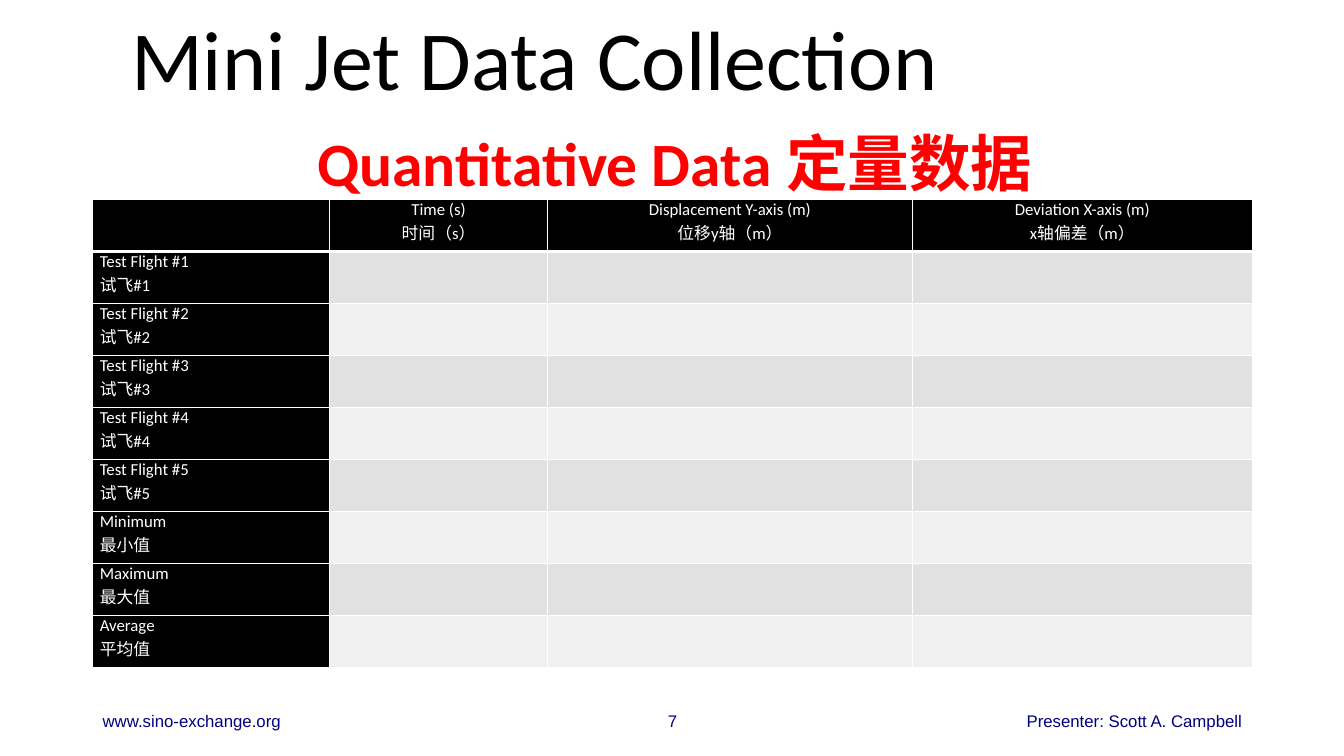
from pptx import Presentation
from pptx.dml.color import RGBColor as Rgb
from pptx.enum.text import MSO_ANCHOR as Anchor, MSO_AUTO_SIZE as Fit, PP_ALIGN as Align
from pptx.oxml import parse_xml as to_xml
from pptx.oxml.ns import nsdecls
from pptx.util import Pt

PX = 9144
HUES = {"black": "000000", "white": "FFFFFF", "red": "FF0000",
        "navy": "00007D", "dark": "E1E1E1", "light": "F0F0F0"}
COLS = [235, 216, 362, 337]
HEADS = ["", "Time (s)\v时间（s）", "Displacement Y-axis (m)\v位移y轴（m）",
         "Deviation X-axis (m)\vx轴偏差（m）"]
ROWS = [f"Test Flight #{n}\v试飞#{n}" for n in range(1, 6)]
ROWS += ["Minimum\v最小值", "Maximum\v最大值", "Average\v平均值"]


def style(para, size, hue, face="Calibri", bold=False, align=Align.LEFT):
    """Format a paragraph and its runs."""
    para.alignment = align
    for run in para.runs:
        font = run.font
        font.name, font.size, font.bold = face, Pt(size), bold
        font.color.rgb = Rgb.from_string(HUES[hue])


def label(slide, box, text, *look, **more):
    """Add a one-line text box centred vertically in the box."""
    frame = slide.shapes.add_textbox(*(n * PX for n in box)).text_frame
    frame.word_wrap = True
    frame.vertical_anchor = Anchor.MIDDLE
    para = frame.paragraphs[0]
    para.text = text
    style(para, *look, **more)


def title(slide, box, text):
    """Move, fill and format the title placeholder."""
    shape = slide.shapes.title
    shape.left, shape.top, shape.width, shape.height = (n * PX for n in box)
    frame = shape.text_frame
    frame.text = text
    frame.auto_size = Fit.NONE
    frame.vertical_anchor = Anchor.MIDDLE
    para = frame.paragraphs[0]
    para.line_spacing = 0.9
    style(para, 60, "black")


def edges(cell, base):
    """Draw white cell borders, with the bottom one of the given width."""
    props = cell._tc.get_or_add_tcPr()
    for side, wide in zip("LRTB", (1, 1, 1, base)):
        props.append(to_xml(
            f'<a:ln{side} {nsdecls("a")} w="{Pt(wide)}"><a:solidFill>'
            f'<a:srgbClr val="{HUES["white"]}"/></a:solidFill></a:ln{side}>'))


def fill(cell, text, hue, head):
    """Set the look and text of one cell."""
    edges(cell, 3 if head else 1)
    cell.fill.solid()
    cell.fill.fore_color.rgb = Rgb.from_string(HUES[hue])
    cell.margin_left = cell.margin_right = 7 * PX
    cell.margin_top = cell.margin_bottom = 0
    if text:
        para = cell.text_frame.paragraphs[0]
        para.text = text
        style(para, 12, "white", align=Align.CENTER if head else Align.LEFT)


def grid(slide, box):
    """Add the flight table, with rows of equal height."""
    count = len(ROWS) + 1
    table = slide.shapes.add_table(count, len(COLS), *(n * PX for n in box)).table
    for col, wide in zip(table.columns, COLS):
        col.width = wide * PX
    for r, row in enumerate(table.rows):
        row.height = box[3] * PX // count
        texts = [ROWS[r - 1], "", "", ""] if r else HEADS
        band = "dark" if r % 2 else "light"
        for c, text in enumerate(texts):
            fill(row.cells[c], text, band if r and c else "black", r == 0)


def footer(slide, box):
    """Place site, page number and presenter across the box."""
    x, y, w, h = box
    side, mid = 450, 140
    parts = [(x, side, "www.sino-exchange.org", Align.LEFT),
             (x + (w - mid) // 2, mid, "7", Align.CENTER),
             (x + w - side, side, "Presenter: Scott A. Campbell", Align.RIGHT)]
    for left, wide, text, align in parts:
        label(slide, (left, y, wide, h), text, 12, "navy", "Arial", align=align)


def main():
    """Build and save the deck."""
    deck = Presentation()
    deck.slide_width, deck.slide_height = 1333 * PX, 750 * PX
    slide = deck.slides.add_slide(deck.slide_layouts[5])
    title(slide, (120, 17, 1121, 91), "Mini Jet Data Collection")
    label(slide, (97, 119, 1145, 84), "Quantitative Data 定量数据", 44, "red",
          bold=True, align=Align.CENTER)
    grid(slide, (92, 198, 1150, 464))
    footer(slide, (92, 695, 1150, 40))
    deck.save("out.pptx")


if __name__ == "__main__":
    main()
